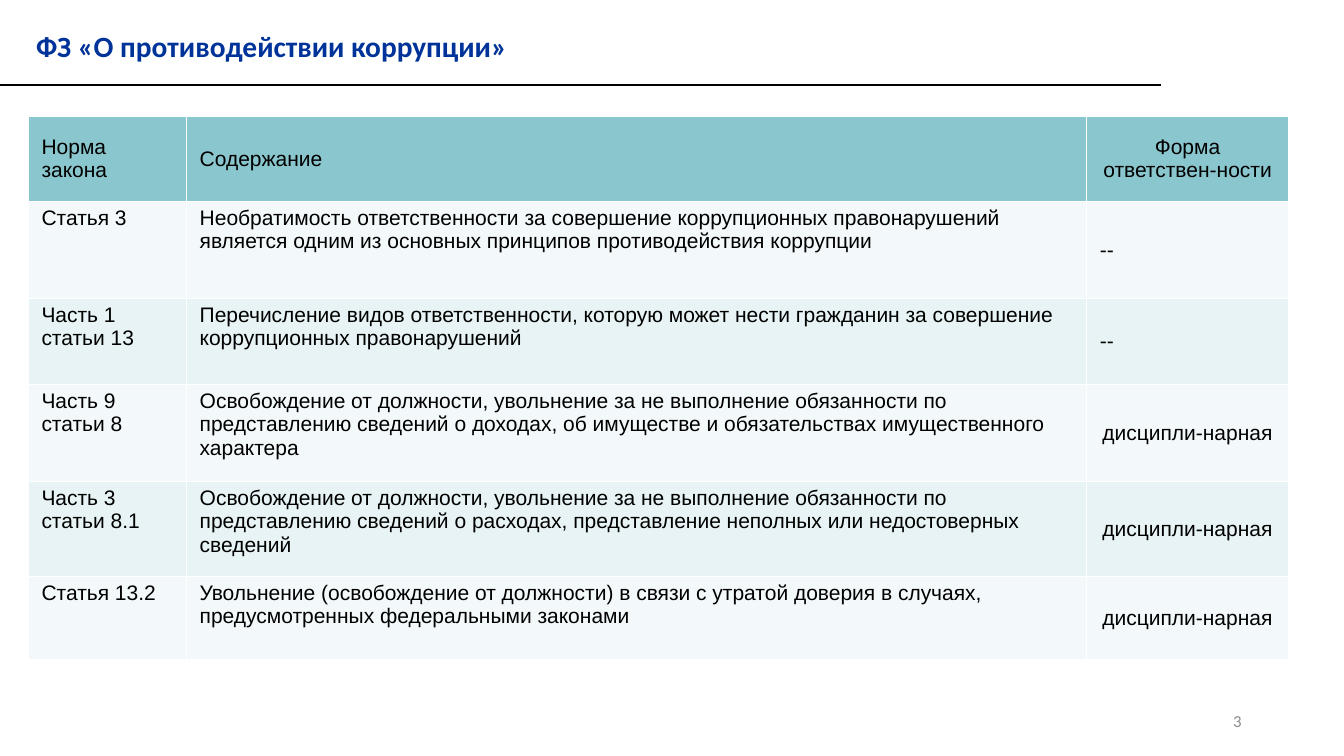
from lxml.etree import SubElement
from pptx import Presentation
from pptx.dml.color import RGBColor
from pptx.enum.shapes import MSO_CONNECTOR
from pptx.enum.text import MSO_ANCHOR, PP_ALIGN
from pptx.oxml.ns import qn
from pptx.util import Pt

BLACK = RGBColor(0x00, 0x00, 0x00)
NAVY = RGBColor(0x00, 0x33, 0x99)
GREY = RGBColor(0x8C, 0x8C, 0x8C)
TEAL = RGBColor(0x8A, 0xC6, 0xCD)
PALE = RGBColor(0xF3, 0xF9, 0xFA)
MINT = RGBColor(0xE7, 0xF3, 0xF4)

TITLE_FONT = {"name": "Calibri", "size": Pt(21), "bold": True}
NUMBER_FONT = {"name": "Calibri", "size": Pt(12), "bold": False}
TABLE_FONT = {"name": "Arial", "size": Pt(15), "bold": False}
CELL_MARGINS = {
    "margin_left": Pt(9.36), "margin_right": Pt(9.36),
    "margin_top": Pt(3.6), "margin_bottom": Pt(3.6),
}
BORDER_SIDES = ("a:lnL", "a:lnR", "a:lnT", "a:lnB")

COLUMN_WIDTHS = (113, 643, 144)
ROW_HEIGHTS = (61, 69.3, 61.4, 69.3, 67.7, 59.6)
ROWS = (
    ("Норма закона", "Содержание", "Форма ответствен-ности"),
    ("Статья 3",
     "Необратимость ответственности за совершение коррупционных правонарушений "
     "является одним из основных принципов противодействия коррупции",
     "--"),
    ("Часть 1 статьи 13",
     "Перечисление видов ответственности, которую может нести гражданин за совершение "
     "коррупционных правонарушений",
     "--"),
    ("Часть 9 статьи 8",
     "Освобождение от должности, увольнение за не выполнение обязанности по "
     "представлению сведений о доходах, об имуществе и обязательствах имущественного "
     "характера",
     "дисципли-нарная"),
    ("Часть 3 статьи 8.1",
     "Освобождение от должности, увольнение за не выполнение обязанности по "
     "представлению сведений о расходах, представление неполных или недостоверных "
     "сведений",
     "дисципли-нарная"),
    ("Статья 13.2",
     "Увольнение (освобождение от должности) в связи с утратой доверия в случаях, "
     "предусмотренных федеральными законами",
     "дисципли-нарная"),
)


def write_text(paragraph, text, font, color, alignment=PP_ALIGN.LEFT):
    """Add one formatted run to a paragraph."""
    paragraph.alignment = alignment
    run = paragraph.add_run()
    run.text = text
    for name, value in font.items():
        setattr(run.font, name, value)
    run.font.color.rgb = color


def add_label(slide, box, text, font, color, alignment=PP_ALIGN.LEFT):
    """Add a vertically centred text box and return its paragraph."""
    frame = slide.shapes.add_textbox(*map(Pt, box)).text_frame
    frame.word_wrap = True
    frame.vertical_anchor = MSO_ANCHOR.MIDDLE
    paragraph = frame.paragraphs[0]
    write_text(paragraph, text, font, color, alignment)
    return paragraph


def add_header(slide, box):
    """Place the title in its box with a rule below from the slide edge."""
    paragraph = add_label(slide, box, "ФЗ «О противодействии коррупции»", TITLE_FONT, NAVY)
    paragraph.line_spacing = 0.8
    paragraph.space_before = Pt(6)
    left, top, width, height = box
    rule_top = Pt(top + height + 5.8)
    rule = slide.shapes.add_connector(
        MSO_CONNECTOR.STRAIGHT, Pt(0), rule_top, Pt(left + width + 270), rule_top)
    rule.line.color.rgb = BLACK
    rule.line.width = Pt(1.5)
    SubElement(rule._element.spPr, qn("a:effectLst"))


def set_borders(cell):
    """Draw thin white borders on every side of a cell."""
    properties = cell._tc.get_or_add_tcPr()
    for index, side in enumerate(BORDER_SIDES):
        line = properties.makeelement(qn(side), {"w": str(Pt(1))})
        fill = SubElement(line, qn("a:solidFill"))
        SubElement(fill, qn("a:srgbClr"), val="FFFFFF")
        properties.insert(index, line)


def fill_cell(cell, text, row, column):
    """Fill and format a cell according to its row and column."""
    is_header = row == 0
    is_form = column == len(COLUMN_WIDTHS) - 1
    for name, value in CELL_MARGINS.items():
        setattr(cell, name, value)
    cell.vertical_anchor = MSO_ANCHOR.MIDDLE if is_header or is_form else MSO_ANCHOR.TOP
    cell.fill.solid()
    cell.fill.fore_color.rgb = TEAL if is_header else (MINT, PALE)[row % 2]
    alignment = PP_ALIGN.CENTER if is_form and text != "--" else PP_ALIGN.LEFT
    write_text(cell.text_frame.paragraphs[0], text, TABLE_FONT, BLACK, alignment)
    set_borders(cell)


def add_law_table(slide, box):
    """Place the table of legal provisions in its box."""
    table = slide.shapes.add_table(len(ROWS), len(COLUMN_WIDTHS), *map(Pt, box)).table
    for column, width in zip(table.columns, COLUMN_WIDTHS):
        column.width = Pt(width)
    for row, height in zip(table.rows, ROW_HEIGHTS):
        row.height = Pt(height)
    for row, texts in enumerate(ROWS):
        for column, text in enumerate(texts):
            fill_cell(table.cell(row, column), text, row, column)


def main():
    """Build and save the slide."""
    presentation = Presentation()
    presentation.slide_width = Pt(960)
    presentation.slide_height = Pt(540)
    slide = presentation.slides.add_slide(presentation.slide_layouts[6])
    add_label(slide, (678, 500.5, 216, 28.8), "3", NUMBER_FONT, GREY, PP_ALIGN.RIGHT)
    add_header(slide, (18.7, 15.1, 540.7, 39.6))
    add_law_table(slide, (20.3, 83, sum(COLUMN_WIDTHS), sum(ROW_HEIGHTS)))
    presentation.save("out.pptx")


if __name__ == "__main__":
    main()
